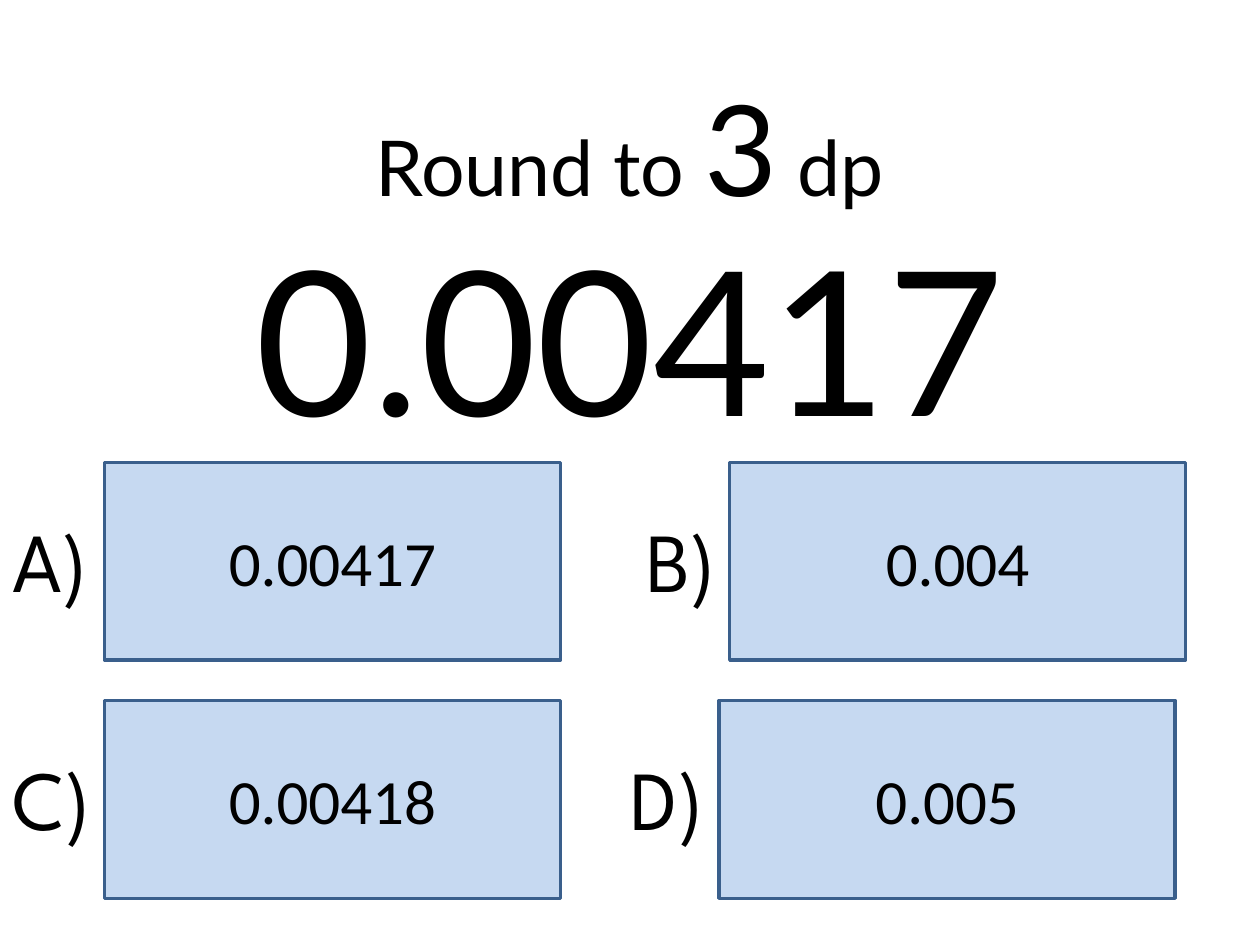
from pptx import Presentation
from pptx.dml.color import RGBColor
from pptx.enum.shapes import MSO_SHAPE
from pptx.enum.text import MSO_ANCHOR, MSO_AUTO_SIZE, PP_ALIGN
from pptx.util import Cm, Pt

RECTANGLE = MSO_SHAPE.RECTANGLE
MIDDLE = MSO_ANCHOR.MIDDLE
GROW = MSO_AUTO_SIZE.SHAPE_TO_FIT_TEXT
LEFT, CENTER = PP_ALIGN.LEFT, PP_ALIGN.CENTER

BLACK = RGBColor(0x00, 0x00, 0x00)
PALE_BLUE = RGBColor(0xC6, 0xD9, 0xF1)
DARK_BLUE = RGBColor(0x3A, 0x5F, 0x8C)

# Sizes in centimetres
BOX_WIDTH, BOX_HEIGHT = 9.19, 3.99
ROW_TOPS = (9.32, 14.12)
LABEL_DROP, LABEL_HEIGHT = 0.81, 2.31

# Row, label, label left, label width, answer, box left
ANSWERS = [
    (0, "A)", 0, 2.41, "0.00417", 2.11),
    (0, "B)", 12.78, 2.13, "0.004", 14.71),
    (1, "C)", 0, 2.54, "0.00418", 2.11),
    (1, "D)", 12.47, 2.41, "0.005", 14.5),
]


def write_text(frame, spans, font_name, alignment):
    """Fill the first paragraph with (text, point size) spans."""
    para = frame.paragraphs[0]
    para.alignment = alignment
    for text, size in spans:
        span = para.add_run()
        span.text = text
        span.font.color.rgb = BLACK
        for name, value in {"name": font_name, "size": Pt(size)}.items():
            setattr(span.font, name, value)


def add_text(slide, place, spans, font_name, alignment, frame_format):
    box = slide.shapes.add_textbox(*map(Cm, place))
    for name, value in frame_format.items():
        setattr(box.text_frame, name, value)
    write_text(box.text_frame, spans, font_name, alignment)


def add_heading(slide, top, spans):
    add_text(slide, (1.9, top, 21.59, 4.09), spans, "Lato", CENTER,
             {"word_wrap": True, "vertical_anchor": MIDDLE})


def add_answer_box(slide, left, top, answer):
    box = slide.shapes.add_shape(
        RECTANGLE, *map(Cm, (left, top, BOX_WIDTH, BOX_HEIGHT)))
    box.shadow.inherit = False
    box.fill.solid()
    box.fill.fore_color.rgb = PALE_BLUE
    box.line.color.rgb = DARK_BLUE
    box.line.width = Pt(2)
    box.text_frame.vertical_anchor = MIDDLE
    write_text(box.text_frame, [(answer, 36)], "Calibri", CENTER)


def add_label(slide, left, top, width, label):
    add_text(slide, (left, top, width, LABEL_HEIGHT), [(label, 48)],
             "League Spartan", LEFT, {"word_wrap": False, "auto_size": GROW})


def main():
    deck = Presentation()
    deck.slide_width, deck.slide_height = Cm(25.4), Cm(19.05)
    slide = deck.slides.add_slide(deck.slide_layouts[6])

    # Answer choices
    for row, label, label_left, label_width, answer, box_left in ANSWERS:
        top = ROW_TOPS[row]
        add_answer_box(slide, box_left, top, answer)
        add_label(slide, label_left, top + LABEL_DROP, label_width, label)

    # Question
    add_heading(slide, 0.91, [("Round to ", 44), ("3", 72), (" dp", 44)])
    add_heading(slide, 4.72, [("0.00417", 115)])

    deck.save("out.pptx")


if __name__ == "__main__":
    main()
